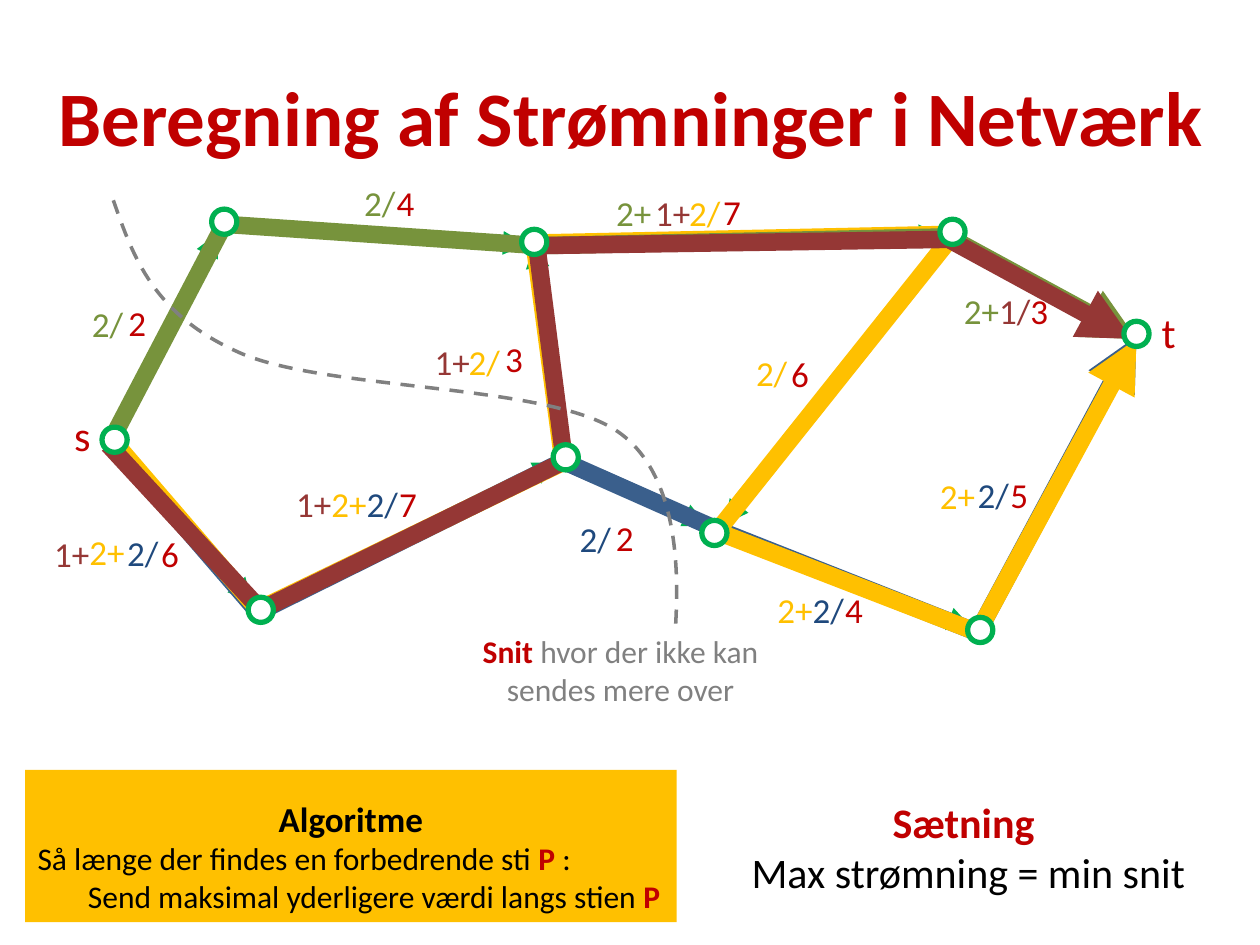
from lxml.etree import SubElement
from pptx import Presentation
from pptx.dml.color import RGBColor
from pptx.enum.dml import MSO_LINE
from pptx.enum.shapes import MSO_CONNECTOR, MSO_SHAPE
from pptx.enum.text import MSO_ANCHOR, PP_ALIGN
from pptx.oxml.ns import qn
from pptx.util import Pt

PX = 9144  # EMU per px, 100 px to the inch
RED, GREEN, GREY, BLACK, WHITE = "C00000", "00B050", "808080", "000000", "FFFFFF"
AMBER, BROWN, OLIVE, NAVY, BLUE = "FFC000", "953735", "77933C", "1F497D", "3A5F8C"
NODE = 20

EDGES = [
    (457, 369, 561, 417), (427, 197, 748, 187), (88, 350, 200, 478),
    (90, 350, 173, 185), (204, 489, 442, 367), (775, 502, 899, 274),
    (573, 422, 771, 498), (755, 186, 575, 416), (756, 186, 893, 262),
    (176, 179, 418, 194), (449, 364, 424, 194),
]
NODES = [
    (197, 474), (768, 490), (81, 339), (168, 166), (557, 413),
    (892, 255), (746, 174), (414, 182), (439, 353),
]
CAPACITIES = [
    ("2", 92, 234), ("4", 305, 139), ("7", 564, 146), ("3", 808, 225),
    ("5", 792, 371), ("4", 661, 462), ("2", 479, 405), ("7", 307, 378),
    ("6", 118, 418), ("6", 618, 275), ("3", 391, 263),
]
FLOW_LABELS = [
    (AMBER, 38, [("2+", 71, 416), ("2+", 263, 378), ("2+", 617, 462), ("2+", 746, 372),
                 ("2/", 372, 265), ("2/", 547, 147), ("2/", 600, 274)]),
    (BROWN, 38, [("1+", 43, 418), ("1+", 235, 378), ("1+", 345, 265),
                 ("1+", 520, 147), ("1/", 793, 225)]),
    (OLIVE, 38, [("2/", 73, 235), ("2/", 289, 139), ("2+", 489, 147), ("2+", 765, 225)]),
    (NAVY, 28, [("2/", 291, 378), ("2/", 460, 406), ("2/", 645, 462),
                ("2/", 776, 371), ("2/", 101, 417)]),
]
FLOW_PATHS = [
    (BLUE, [(86, 348), (205, 486), (447, 366), (571, 421), (776, 502), (902, 267)]),
    (AMBER, [(88, 348), (205, 484), (447, 367), (424, 193), (757, 186),
             (569, 422), (776, 502), (902, 269)]),
    (OLIVE, [(88, 350), (178, 178), (428, 195), (753, 188), (902, 269)]),
    (BROWN, [(86, 353), (207, 484), (448, 366), (426, 195), (753, 190), (898, 269)]),
]
CUT = [
    (90, 159), (106, 205), (122, 249), (188, 279), (254, 310), (430, 304),
    (488, 341), (546, 378), (537, 477), (536, 502),
]


def rgb(value):
    return RGBColor.from_string(value)


class Sketch:
    font = "Calibri"

    def __init__(self, slide):
        self.s = slide

    def stroke(self, sp, color, width, arrow=False):
        sp.line.color.rgb = rgb(color)
        sp.line.width = Pt(width)
        if arrow:
            SubElement(sp.line._get_or_add_ln(), qn("a:tailEnd"), type="triangle")

    def set_runs(self, tf, paragraphs, size, align=PP_ALIGN.LEFT):
        """Fill a frame with paragraphs, each a list of (text, color, bold) runs."""
        tf.word_wrap = True
        for i, runs in enumerate(paragraphs):
            p = tf.add_paragraph() if i else tf.paragraphs[0]
            p.alignment = align
            for text, color, bold in runs:
                r = p.add_run()
                r.text = text
                r.font.name, r.font.size, r.font.bold = self.font, Pt(size), bold
                r.font.color.rgb = rgb(color)

    def text(self, box, paragraphs, size, align=PP_ALIGN.LEFT, inset=10):
        sp = self.s.shapes.add_textbox(*(v * PX for v in box))
        tf = sp.text_frame
        tf.margin_left = tf.margin_right = inset * PX
        self.set_runs(tf, paragraphs, size, align)
        return tf

    def label(self, text, x, y, color=RED, width=29, height=44, size=20, inset=10):
        self.text((x, y, width, height), [[(text, color, False)]], size, inset=inset)

    def shape(self, kind, box, fill):
        sp = self.s.shapes.add_shape(kind, *(v * PX for v in box))
        sp.shadow.inherit = False
        sp.fill.solid()
        sp.fill.fore_color.rgb = rgb(fill)
        sp.line.fill.background()
        return sp

    def node(self, x, y):
        sp = self.shape(MSO_SHAPE.OVAL, (x, y, NODE, NODE), WHITE)
        self.stroke(sp, GREEN, 3)

    def edge(self, *ends):
        sp = self.s.shapes.add_connector(MSO_CONNECTOR.STRAIGHT, *(v * PX for v in ends))
        self.stroke(sp, GREEN, 4.5, arrow=True)
        SubElement(sp._element.spPr, qn("a:effectLst"))

    def polyline(self, points, color, width, arrow=False):
        fb = self.s.shapes.build_freeform(*points[0], scale=PX)
        fb.add_line_segments(points[1:], close=False)
        sp = fb.convert_to_shape()
        sp.shadow.inherit = False
        sp.fill.background()
        self.stroke(sp, color, width, arrow)
        return sp

    def curve(self, points, color, width):
        """Dashed Bezier curve: a start, then two handles and an end per piece."""
        sp = self.polyline(points, color, width)
        sp.line.dash_style = MSO_LINE.DASH
        segments = list(sp._element.iter(qn("a:lnTo")))
        for i in range(0, len(segments), 3):
            first, *rest = segments[i:i + 3]
            first.tag = qn("a:cubicBezTo")
            for seg in rest:
                first.append(seg[0])
                seg.getparent().remove(seg)

    def algorithm(self, box, heading, lines, indent):
        tf = self.shape(MSO_SHAPE.RECTANGLE, box, AMBER).text_frame
        tf.vertical_anchor = MSO_ANCHOR.TOP
        self.set_runs(tf, [heading, *lines], 18)
        first, *_, last = tf.paragraphs
        first.alignment, first.line_spacing = PP_ALIGN.CENTER, 1.5
        first.runs[0].font.size = Pt(20)
        pPr = last._p.get_or_add_pPr()
        pPr.set("marL", str(indent * PX))
        pPr.set("indent", "0")


def main():
    prs = Presentation()
    prs.slide_width, prs.slide_height = 1000 * PX, 750 * PX
    d = Sketch(prs.slides.add_slide(prs.slide_layouts[6]))

    for ends in EDGES:
        d.edge(*ends)
    for name, x, y in [("s", 49, 320), ("t", 912, 238)]:
        d.label(name, x, y, height=50, size=24)
    for capacity in CAPACITIES:
        d.label(*capacity)

    title = d.text((0, 29, 1002, 125), [[("Beregning af Strømninger i Netværk", RED, True)]],
                   44, PP_ALIGN.CENTER)
    title.vertical_anchor = MSO_ANCHOR.MIDDLE
    d.algorithm((20, 611, 517, 121), [("Algoritme", BLACK, True)], [
        [("Så længe der findes en forbedrende sti ", BLACK, False),
         ("P ", RED, True), (":", BLACK, False)],
        [("Send maksimal yderligere værdi langs stien ", BLACK, False), ("P", RED, True)],
    ], indent=40)

    for color, width, labels in FLOW_LABELS:
        for label in labels:
            d.label(*label, color=color, width=width, inset=0)
    for color, points in FLOW_PATHS:
        d.polyline(points, color, 10, arrow=True)
    for corner in NODES:
        d.node(*corner)

    d.curve(CUT, GREY, 2)
    d.text((357, 497, 271, 71), [[("Snit ", RED, True),
                                  ("hvor der ikke kan sendes mere over", GREY, False)]],
           18, PP_ALIGN.CENTER)
    d.text((572, 627, 393, 91), [[("Sætning ", RED, True)],
                                 [("Max strømning = min snit", BLACK, False)]],
           24, PP_ALIGN.CENTER)
    prs.save("out.pptx")


if __name__ == "__main__":
    main()
